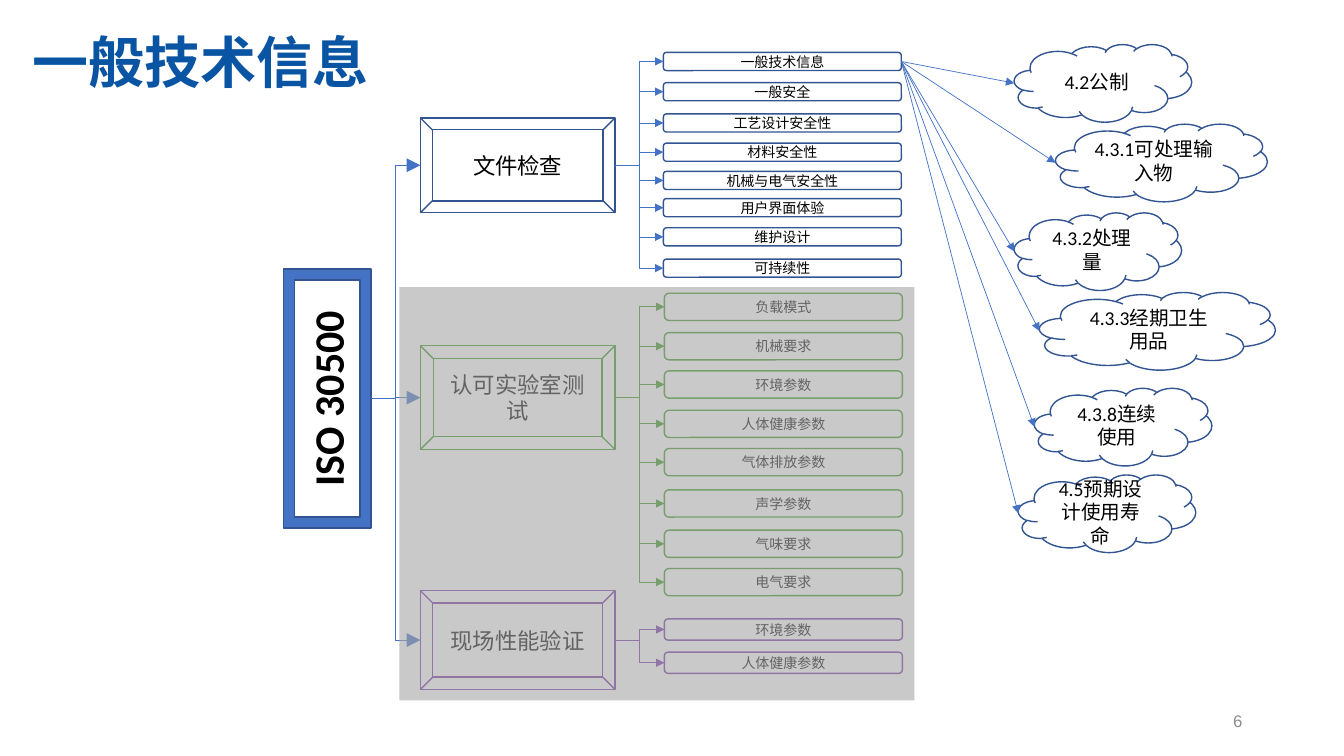
from lxml.etree import SubElement
from pptx import Presentation
from pptx.dml.color import RGBColor
from pptx.enum.shapes import MSO_CONNECTOR, MSO_SHAPE
from pptx.enum.text import MSO_ANCHOR, PP_ALIGN
from pptx.oxml.ns import qn
from pptx.util import Inches, Pt

COLORS = {
    "title": "0A55A3", "text": "000000", "number": "8C8C8C",
    "fill": "4472C4", "arrow": "4472C4", "blue": "325491",
    "green": "36941C", "purple": "7030A0", "veil": "A5A5A5",
}


def rgb(name):
    return RGBColor.from_string(COLORS[name])


def write(shape, text, size, color="text", font="Calibri", bold=False,
          align=PP_ALIGN.CENTER, spacing=None, inset=None):
    frame = shape.text_frame
    frame.word_wrap = True
    frame.vertical_anchor = MSO_ANCHOR.MIDDLE
    if inset is not None:
        frame.margin_left = frame.margin_right = Inches(inset)
        frame.margin_top = frame.margin_bottom = Inches(inset)
    paragraph = frame.paragraphs[0]
    paragraph.alignment = align
    if spacing:
        paragraph.line_spacing = spacing
    run = paragraph.add_run()
    run.text = text
    run.font.size = Pt(size)
    run.font.name = font
    run.font.bold = bold
    run.font.color.rgb = rgb(color)


def add_outline(slide, kind, box, line=None, fill=None):
    shape = slide.shapes.add_shape(kind, *map(Inches, box))
    shape.shadow.inherit = False
    if fill:
        shape.fill.solid()
        shape.fill.fore_color.rgb = rgb(fill)
    else:
        shape.fill.background()
    if line:
        shape.line.color.rgb = rgb(line)
        shape.line.width = Pt(1)
    else:
        shape.line.fill.background()
    return shape


def add_arrow(slide, kind, start, end, color="arrow", head="med"):
    arrow = slide.shapes.add_connector(kind, *start, *end)
    arrow.line.color.rgb = rgb(color)
    arrow.line.width = Pt(0.5)
    SubElement(arrow.line._get_or_add_ln(), qn("a:tailEnd"),
               type="triangle", w=head, len=head)
    SubElement(arrow._element.spPr, qn("a:effectLst"))
    return arrow


def left_middle(shape):
    return shape.left, shape.top + shape.height // 2


def right_middle(shape):
    return shape.left + shape.width, shape.top + shape.height // 2


def add_label(slide, box, text, **style):
    write(slide.shapes.add_textbox(*map(Inches, box)), text, **style)


def add_standard(slide, box):
    standard = add_outline(slide, MSO_SHAPE.FRAME, box, "blue", "fill")
    write(standard, "ISO 30500", 30, bold=True)
    standard.text_frame._txBody.bodyPr.set("vert", "vert270")
    return standard


def add_branch(slide, box, standard, name, name_offset, name_height,
               topics, topic_height, color, arrow_color):
    """Draw a category with its topics in a right-hand column."""
    left, top, width, _ = box
    category = add_outline(slide, MSO_SHAPE.BEVEL,
                           (left, top + name_offset, 1.93, name_height), color)
    write(category, name, 16)
    add_arrow(slide, MSO_CONNECTOR.ELBOW, right_middle(standard),
              left_middle(category), head="lg")
    topic_width = 2.36
    boxes = []
    for offset, text in topics:
        topic = add_outline(
            slide, MSO_SHAPE.ROUNDED_RECTANGLE,
            (left + width - topic_width, top + offset, topic_width, topic_height),
            color)
        write(topic, text, 10)
        add_arrow(slide, MSO_CONNECTOR.ELBOW, right_middle(category),
                  left_middle(topic), arrow_color)
        boxes.append(topic)
    return boxes


def add_clauses(slide, box, topic, clauses):
    """Draw the clause clouds and the arrows fanning out to them."""
    left, top, _, _ = box
    for dx, dy, width, text in clauses:
        cloud = add_outline(slide, MSO_SHAPE.CLOUD,
                            (left + dx, top + dy, width, 0.77), "blue")
        write(cloud, text, 14)
        arrow = add_arrow(slide, MSO_CONNECTOR.STRAIGHT, right_middle(topic),
                          left_middle(cloud))
        arrow.begin_connect(topic, 3)


def add_veil(slide, box):
    veil = add_outline(slide, MSO_SHAPE.RECTANGLE, box, fill="veil")
    color = veil._element.spPr.find(qn("a:solidFill"))[0]
    SubElement(color, qn("a:alpha"), val="60000")


DOCUMENT_TOPICS = [
    (0, "一般技术信息"), (0.3, "一般安全"), (0.61, "工艺设计安全性"),
    (0.9, "材料安全性"), (1.18, "机械与电气安全性"), (1.45, "用户界面体验"),
    (1.74, "维护设计"), (2.05, "可持续性"),
]
LAB_TOPICS = [
    (0, "负载模式"), (0.39, "机械要求"), (0.77, "环境参数"),
    (1.16, "人体健康参数"), (1.54, "气体排放参数"), (1.95, "声学参数"),
    (2.35, "气味要求"), (2.73, "电气要求"),
]
FIELD_TOPICS = [(0.28, "环境参数"), (0.61, "人体健康参数")]
CLAUSES = [
    (0, 0, 1.76, "4.2公制"), (0.41, 0.79, 2.1, "4.3.1可处理输入物"),
    (0, 1.67, 1.66, "4.3.2处理量"), (0.25, 2.46, 2.34, "4.3.3经期卫生用品"),
    (0.2, 3.41, 1.76, "4.3.8连续使用"), (0.04, 4.27, 1.76, "4.5预期设计使用寿命"),
]


def main():
    deck = Presentation()
    deck.slide_width, deck.slide_height = Inches(13.33), Inches(7.5)
    slide = deck.slides.add_slide(deck.slide_layouts[6])

    # Title
    add_label(slide, (0.32, 0.15, 12.24, 0.99), "一般技术信息", size=40,
              color="title", font="Arial", bold=True, align=PP_ALIGN.LEFT,
              spacing=0.9, inset=0)

    # Standard and its three branches
    standard = add_standard(slide, (2.81, 2.67, 0.87, 2.57))
    document_boxes = add_branch(
        slide, (4.17, 0.52, 4.77, 2.23), standard, "文件检查", 0.65, 0.94,
        DOCUMENT_TOPICS, 0.18, "blue", "arrow")
    add_branch(slide, (4.17, 2.91, 4.78, 3), standard, "认可实验室测试", 0.52, 1.03,
               LAB_TOPICS, 0.27, "green", "green")
    add_branch(slide, (4.17, 5.86, 4.78, 0.98), standard, "现场性能验证", 0, 0.98,
               FIELD_TOPICS, 0.21, "purple", "purple")

    # Clauses of the first topic
    add_clauses(slide, (10.06, 0.44, 2.59, 5.04), document_boxes[0], CLAUSES)

    # Page number and veil over the later branches
    add_label(slide, (9.42, 6.95, 3, 0.4), "6", size=12, color="number",
              font="Arial", align=PP_ALIGN.RIGHT)
    add_veil(slide, (3.96, 2.85, 5.11, 4.1))

    deck.save("out.pptx")


if __name__ == "__main__":
    main()
